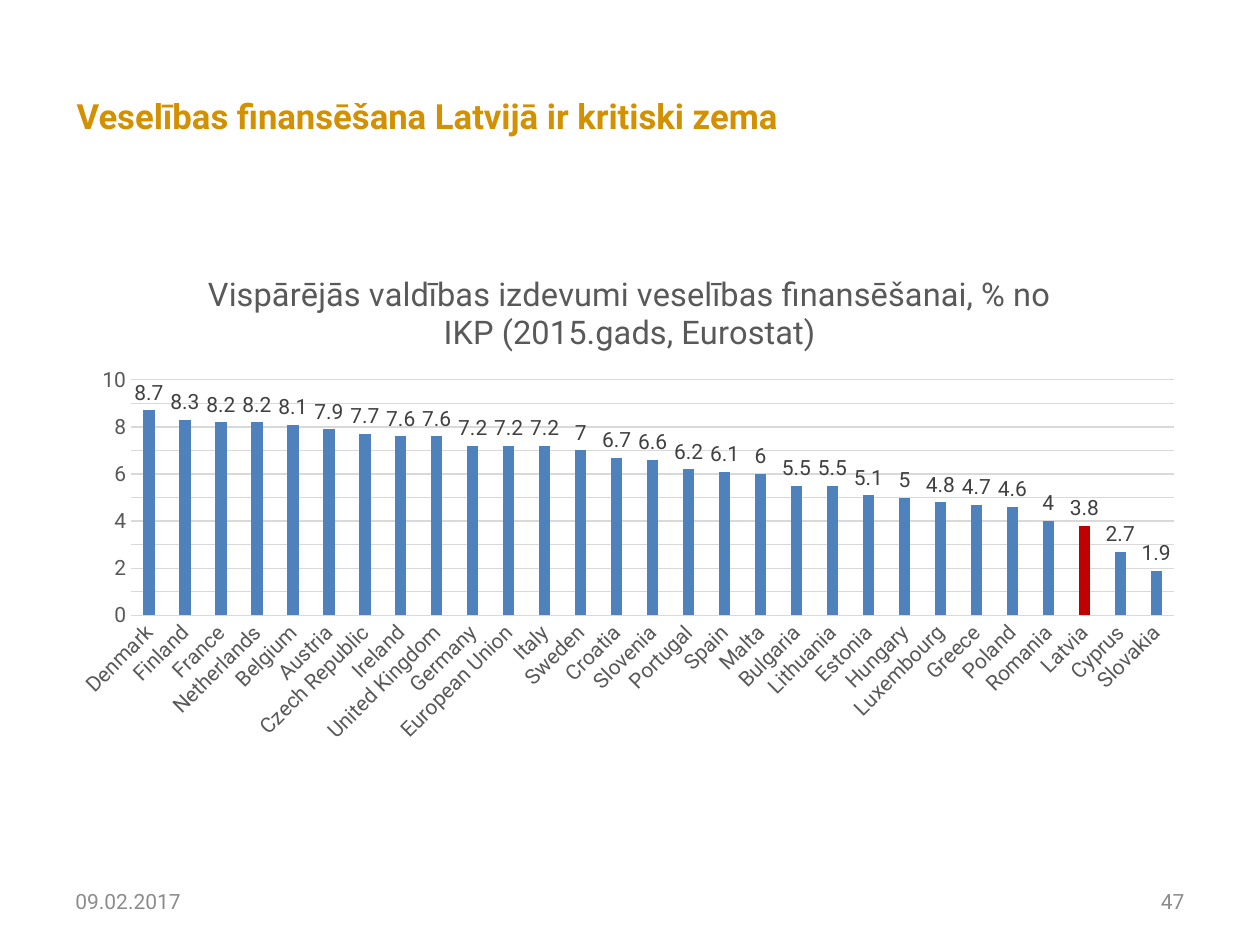
from lxml import etree
from pptx import Presentation
from pptx.chart.data import CategoryChartData
from pptx.dml.color import RGBColor
from pptx.enum.chart import XL_CHART_TYPE, XL_LABEL_POSITION, XL_TICK_MARK
from pptx.enum.text import MSO_ANCHOR, PP_ALIGN
from pptx.oxml.ns import qn
from pptx.util import Inches, Pt

COLUMNS = XL_CHART_TYPE.COLUMN_CLUSTERED
OUT_END = XL_LABEL_POSITION.OUTSIDE_END
NO_TICK = XL_TICK_MARK.NONE
MIDDLE = MSO_ANCHOR.MIDDLE
LEFT, RIGHT = PP_ALIGN.LEFT, PP_ALIGN.RIGHT

GOLD = RGBColor(0xD3, 0x90, 0x01)
BLUE = RGBColor(0x4F, 0x81, 0xBD)
RED = RGBColor(0xC0, 0x00, 0x00)
DARK = RGBColor(0x40, 0x40, 0x40)
GREY = RGBColor(0x59, 0x59, 0x59)
PALE = RGBColor(0x8C, 0x8C, 0x8C)
RULE = RGBColor(0xD9, 0xD9, 0xD9)
FACE = "Roboto"

# Health spending by country, % of GDP
SPEND = {
    "Denmark": 8.7, "Finland": 8.3, "France": 8.2, "Netherlands": 8.2,
    "Belgium": 8.1, "Austria": 7.9, "Czech Republic": 7.7, "Ireland": 7.6,
    "United Kingdom": 7.6, "Germany": 7.2, "European Union": 7.2,
    "Italy": 7.2, "Sweden": 7, "Croatia": 6.7, "Slovenia": 6.6,
    "Portugal": 6.2, "Spain": 6.1, "Malta": 6, "Bulgaria": 5.5,
    "Lithuania": 5.5, "Estonia": 5.1, "Hungary": 5, "Luxembourg": 4.8,
    "Greece": 4.7, "Poland": 4.6, "Romania": 4, "Latvia": 3.8,
    "Cyprus": 2.7, "Slovakia": 1.9,
}


def style(font, size, color, bold=False):
    font.name = FACE
    font.size = Pt(size)
    font.bold = bold
    font.color.rgb = color


def add_text(slide, box, text, size, color, bold=False, align=LEFT):
    frame = slide.shapes.add_textbox(*map(Inches, box)).text_frame
    frame.word_wrap = True
    frame.vertical_anchor = MIDDLE
    frame.text = text
    para = frame.paragraphs[0]
    para.alignment = align
    style(para.runs[0].font, size, color, bold)


def set_rule(line):
    line.color.rgb = RULE
    line.width = Pt(0.75)


def place_plot(chart, x, y, w, h):
    """Fix the inner plot area, in fractions of the chart."""
    area = chart.plots[0]._element.getparent()
    for old in area.findall(qn("c:layout")):
        area.remove(old)
    layout = etree.Element(qn("c:layout"))
    area.insert(0, layout)
    manual = etree.SubElement(layout, qn("c:manualLayout"))
    parts = [("layoutTarget", "inner"), ("xMode", "edge"), ("yMode", "edge"),
             ("x", x), ("y", y), ("w", w), ("h", h)]
    for tag, val in parts:
        etree.SubElement(manual, qn("c:" + tag)).set("val", str(val))


def add_spend(slide, box):
    data = CategoryChartData()
    data.categories = list(SPEND)
    data.add_series("Series 1", list(SPEND.values()))
    chart = slide.shapes.add_chart(COLUMNS, *map(Inches, box), data).chart
    chart.has_legend = False
    chart.font.name = FACE
    chart.font.size = Pt(10)

    # Title
    chart.has_title = True
    frame = chart.chart_title.text_frame
    frame.text = ("Vispārējās valdības izdevumi veselības finansēšanai, "
                  "% no IKP (2015.gads, Eurostat)")
    style(frame.paragraphs[0].runs[0].font, 18.6, GREY)
    chart.chart_title.include_in_layout = False
    place_plot(chart, 0.06, 0.26, 0.92, 0.47)

    # Axes
    cats, vals = chart.category_axis, chart.value_axis
    for axis in (cats, vals):
        axis.major_tick_mark = axis.minor_tick_mark = NO_TICK
        style(axis.tick_labels.font, 12, GREY)
    set_rule(cats.format.line)
    body = cats._element.find(qn("c:txPr")).find(qn("a:bodyPr"))
    body.set("rot", "-2700000")
    body.set("vert", "horz")
    vals.minimum_scale, vals.maximum_scale = 0, 10
    vals.major_unit = 1
    vals.format.line.fill.background()
    set_rule(vals.major_gridlines.format.line)

    # Columns, with Latvia picked out
    plot = chart.plots[0]
    plot.gap_width, plot.overlap = 219, -27
    plot.vary_by_categories = False
    series = plot.series[0]
    series.invert_if_negative = False
    fill = series.format.fill
    fill.solid()
    fill.fore_color.rgb = BLUE
    mark = series.points[list(SPEND).index("Latvia")].format.fill
    mark.solid()
    mark.fore_color.rgb = RED

    # Value labels
    labels = series.data_labels
    labels.show_value = True
    labels.position = OUT_END
    style(labels.font, 12, DARK)


def add_footer(slide, box):
    left, top, width, height = box
    part = 2.33
    add_text(slide, (left, top, part, height), "09.02.2017", 12, PALE)
    add_text(slide, (left + width - part, top, part, height), "47", 12, PALE,
             align=RIGHT)


def main():
    deck = Presentation()
    deck.slide_width, deck.slide_height = Inches(10), Inches(7.5)
    slide = deck.slides.add_slide(deck.slide_layouts[6])
    add_spend(slide, (0.5, 1.98, 9, 3.98))
    add_text(slide, (0.51, 0.68, 6.22, 0.47),
             "Veselības finansēšana Latvijā ir kritiski zema", 19.8, GOLD, True)
    add_footer(slide, (0.5, 6.95, 9, 0.4))
    deck.save("out.pptx")


if __name__ == "__main__":
    main()
